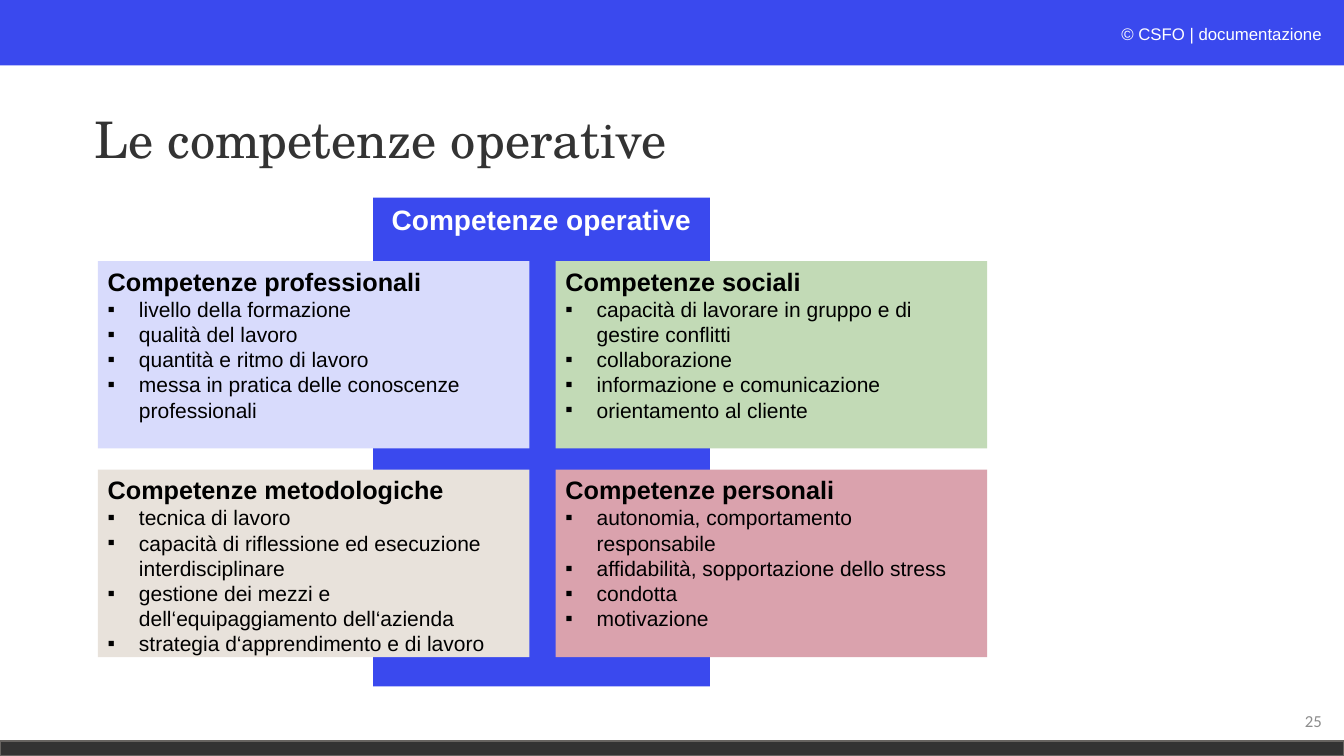
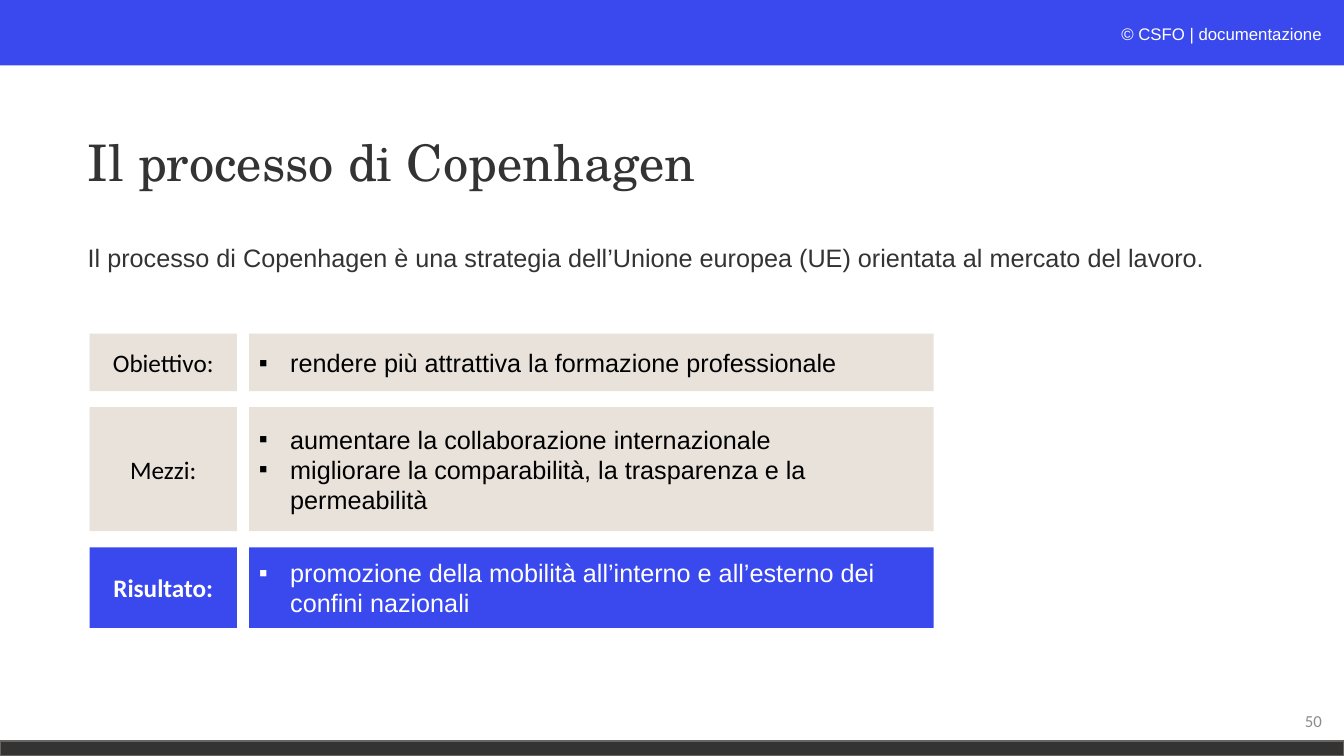
from lxml import etree
from pptx import Presentation, util as u
from pptx.dml.color import RGBColor
from pptx.enum import shapes, text
from pptx.oxml.ns import qn

INK = {
    "blue": "3A49EE", "dark": "333333", "edge": "666360", "white": "FFFFFF",
    "pale": "FCFDFE", "grey": "8C8C8C", "black": "000000", "lilac": "D8DBFC",
    "sand": "E8E2DB", "green": "C2DAB6", "rose": "DAA2AD",
}
SERIF, SANS, LABEL = "TeX Gyre Schola", "Arial", "Calibri"
LEFT, MID, RIGHT = text.PP_ALIGN.LEFT, text.PP_ALIGN.CENTER, text.PP_ALIGN.RIGHT

CARDS = [
    [("lilac", "Competenze professionali", [
        "livello della formazione",
        "qualità del lavoro",
        "quantità e ritmo di lavoro",
        "messa in pratica delle conoscenze professionali"]),
     ("green", "Competenze sociali", [
         "capacità di lavorare in gruppo e di gestire conflitti",
         "collaborazione",
         "informazione e comunicazione",
         "orientamento al cliente"])],
    [("sand", "Competenze metodologiche", [
        "tecnica di lavoro",
        "capacità di riflessione ed esecuzione interdisciplinare",
        "gestione dei mezzi e dell‘equipaggiamento dell‘azienda",
        "strategia d‘apprendimento e di lavoro"]),
     ("rose", "Competenze personali", [
         "autonomia, comportamento responsabile",
         "affidabilità, sopportazione dello stress",
         "condotta",
         "motivazione"])],
]
INTRO = ("Il processo di Copenhagen è una strategia dell’Unione europea (UE) "
         "orientata al mercato del lavoro.")
ROWS = [
    ("Obiettivo:", ["rendere più attrattiva la formazione professionale"],
     0.57, "sand", "black", False),
    ("Mezzi:", ["aumentare la collaborazione internazionale",
                "migliorare la comparabilità, la trasparenza e la permeabilità"],
     1.23, "sand", "black", False),
    ("Risultato:", ["promozione della mobilità all’interno e all’esterno dei confini nazionali"],
     0.8, "blue", "white", True),
]


def color(name):
    return RGBColor.from_string(INK[name])


def write(frame, words, size=18, font=SANS, ink="black", bold=False,
          slant=False, align=LEFT, lead=1.0, bullet=False, join=False):
    para = frame.paragraphs[-1]
    if para.runs and not join:
        para = frame.add_paragraph()
    if not join:
        props = para._p.get_or_add_pPr()
        indent = u.Inches(0.31) if bullet else 0
        props.set("marL", str(indent))
        props.set("indent", str(-indent))
        if bullet:
            etree.SubElement(props, qn("a:buFont")).set("typeface", SANS)
            etree.SubElement(props, qn("a:buChar")).set("char", "▪")
        else:
            etree.SubElement(props, qn("a:buNone"))
        para.alignment, para.line_spacing = align, lead
        para.space_before = u.Pt(0)
    run = para.add_run()
    run.text = words
    face = run.font
    face.size, face.name, face.bold, face.italic = u.Pt(size), font, bold, slant
    face.color.rgb = color(ink)


def place(shape, *area):
    shape.left, shape.top, shape.width, shape.height = map(u.Inches, area)


def setup(frame, middle=False):
    frame.word_wrap = True
    frame.auto_size = text.MSO_AUTO_SIZE.NONE
    frame.vertical_anchor = text.MSO_ANCHOR.MIDDLE if middle else text.MSO_ANCHOR.TOP
    return frame


def box(slide, area, fill, edge=None, middle=False):
    shape = slide.shapes.add_shape(shapes.MSO_SHAPE.RECTANGLE, *map(u.Inches, area))
    shape.shadow.inherit = False
    shape.fill.solid()
    shape.fill.fore_color.rgb = color(fill)
    if edge:
        shape.line.color.rgb, shape.line.width = color(edge), u.Pt(1)
    else:
        shape.line.fill.background()
    return setup(shape.text_frame, middle)


def label(slide, area, middle=False):
    return setup(slide.shapes.add_textbox(*map(u.Inches, area)).text_frame, middle)


def start(deck, layout, title, left, top, number):
    slide = deck.slides.add_slide(deck.slide_layouts[layout])
    box(slide, (0, 0, 13.33, 0.65), "blue")
    box(slide, (0, 7.35, 13.33, 0.15), "dark", "edge")
    note = label(slide, (8.62, 0.19, 4.59, 0.3))
    write(note, "© ", size=12, ink="pale", slant=True, align=RIGHT)
    write(note, "CSFO | documentazione", size=12, ink="white", join=True)
    write(label(slide, (10.21, 6.95, 3, 0.4), True), number,
          size=12, font=LABEL, ink="grey", align=RIGHT)
    head = slide.shapes.title
    place(head, left, top, 8.82, 1.45)
    write(setup(head.text_frame, True), title, size=36, font=SERIF, ink="dark", lead=0.9)
    return slide


def skills(deck):
    slide = start(deck, 5, "Le competenze operative", 0.84, 0.69, "25")
    write(box(slide, (3.7, 1.96, 3.34, 4.85), "blue"), "Competenze operative",
          size=20, ink="white", bold=True, align=MID)
    wide, high = 4.28, 1.86
    for row, cards in enumerate(CARDS):
        for col, (fill, head, items) in enumerate(cards):
            area = (0.97 + col * (wide + 0.26), 2.59 + row * (high + 0.21), wide, high)
            frame = box(slide, area, fill)
            write(frame, head, bold=True)
            for item in items:
                write(frame, item, size=15, bullet=True)


def process(deck):
    slide = start(deck, 1, "Il processo di Copenhagen", 0.77, 0.91, "50")
    body = slide.placeholders[1]
    place(body, 0.77, 2.39, 11.5, 4.44)
    write(setup(body.text_frame), INTRO, ink="dark", lead=0.9)
    top = 3.31
    for name, items, high, fill, ink, bold in ROWS:
        write(box(slide, (0.89, top, 1.46, high), fill, middle=True), name,
              font=LABEL, ink=ink, bold=bold, align=MID)
        frame = box(slide, (2.47, top, 6.79, high), fill, middle=True)
        for item in items:
            write(frame, item, ink=ink, bullet=True)
        top += high + 0.16


def main():
    deck = Presentation()
    deck.slide_width, deck.slide_height = u.Inches(13.33), u.Inches(7.5)
    skills(deck)
    process(deck)
    deck.save("out.pptx")


if __name__ == "__main__":
    main()
